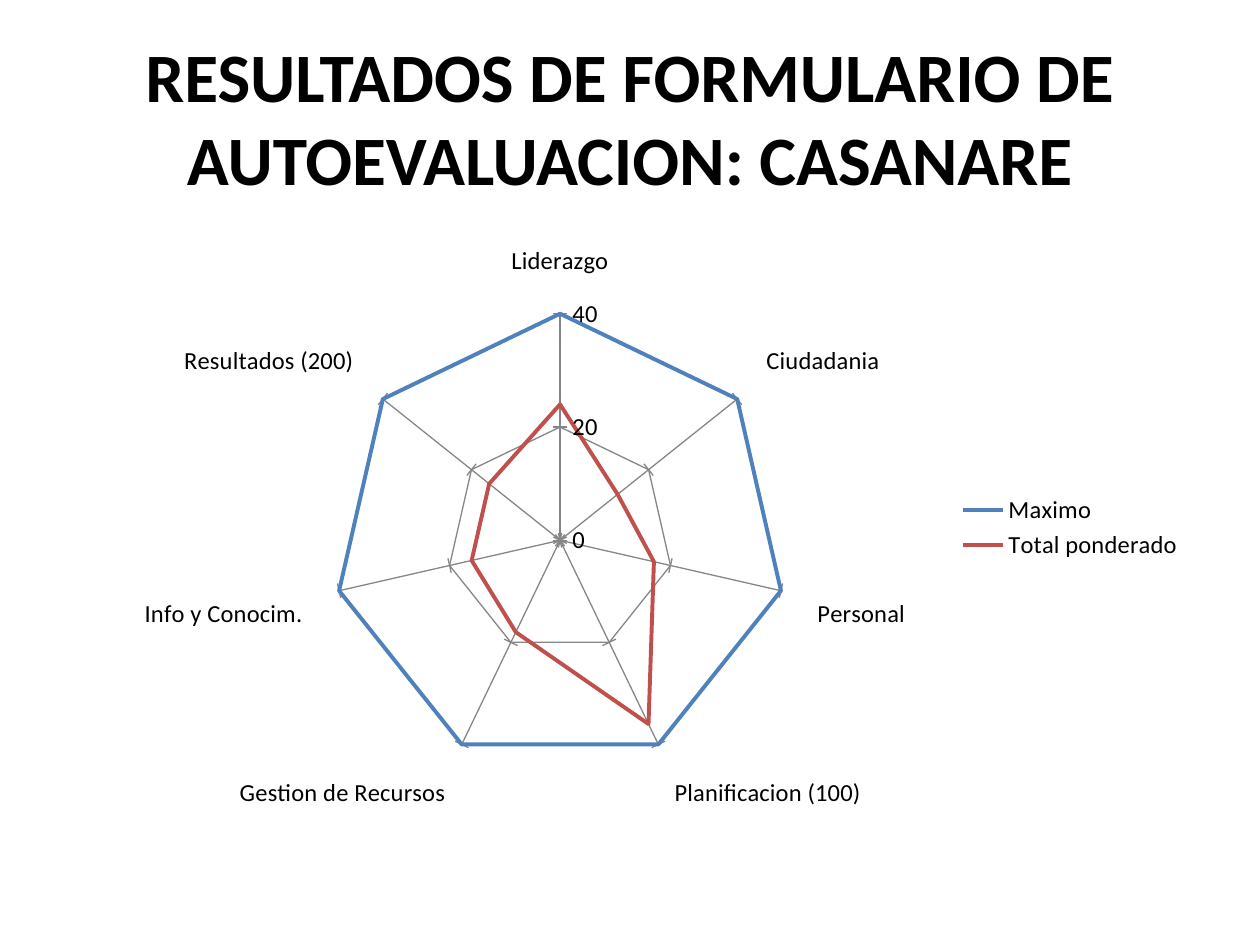
from pptx import Presentation
from pptx.chart.data import CategoryChartData
from pptx.dml.color import RGBColor
from pptx.enum.chart import XL_CHART_TYPE as ChartType, XL_LEGEND_POSITION as LegendPosition, XL_TICK_MARK as TickMark
from pptx.enum.text import MSO_ANCHOR as Anchor, MSO_AUTO_SIZE as AutoSize, PP_ALIGN as Align
from pptx.util import Inches, Pt

BLACK = RGBColor(0x00, 0x00, 0x00)
GRAY = RGBColor(0x86, 0x86, 0x86)
BLUE = RGBColor(0x4F, 0x81, 0xBD)
RED = RGBColor(0xC0, 0x50, 0x4D)
FONT = "Calibri"

CRITERIA = ["Liderazgo", "Ciudadania", "Personal", "Planificacion (100)",
            "Gestion de Recursos", "Info y Conocim.", "Resultados (200)"]
SCORES = [
    ("Maximo", [40] * len(CRITERIA), BLUE),
    ("Total ponderado", [24, 13, 17, 36, 18, 16, 16], RED),
]


def format_font(font, size, bold=False, color=BLACK):
    """Apply the slide typeface to a font."""
    font.name = FONT
    font.size = Pt(size)
    font.bold = bold
    font.color.rgb = color


def write_text(frame, text, size, bold=False, color=BLACK, align=Align.CENTER):
    """Fill a text frame with one formatted paragraph."""
    frame.word_wrap = True
    frame.auto_size = AutoSize.NONE
    frame.vertical_anchor = Anchor.MIDDLE
    paragraph = frame.paragraphs[0]
    paragraph.alignment = align
    run = paragraph.add_run()
    run.text = text
    format_font(run.font, size, bold, color)


def place_title(slide, left, top, width, height):
    """Place the slide heading in the given box."""
    heading = slide.shapes.title
    heading.left, heading.top = left, top
    heading.width, heading.height = width, height
    write_text(heading.text_frame,
               "RESULTADOS DE FORMULARIO DE AUTOEVALUACION: CASANARE",
               size=39.6, bold=True)


def place_radar(slide, left, top, width, height):
    """Draw the scores by criterion as a radar in the given box."""
    scores = CategoryChartData(number_format="General")
    scores.categories = CRITERIA
    for name, values, _ in SCORES:
        scores.add_series(name, values)
    radar = slide.shapes.add_chart(ChartType.RADAR, left, top, width, height, scores).chart
    radar.has_title = False
    format_font(radar.font, 14)

    radar.has_legend = True
    radar.legend.position = LegendPosition.RIGHT
    radar.legend.include_in_layout = False

    plot = radar.plots[0]
    plot.vary_by_categories = False
    for series, (_, _, color) in zip(plot.series, SCORES):
        series.smooth = False
        series.format.line.color.rgb = color
        series.format.line.width = Pt(2.25)

    scale = radar.value_axis
    scale.minimum_scale, scale.maximum_scale, scale.major_unit = 0, 40, 20
    scale.major_tick_mark = TickMark.CROSS
    radar.category_axis.major_tick_mark = TickMark.OUTSIDE
    for axis in (radar.category_axis, scale):
        axis.minor_tick_mark = TickMark.NONE
        axis.has_major_gridlines = True
        for line in (axis.format.line, axis.major_gridlines.format.line):
            line.color.rgb = GRAY
            line.width = Pt(0.75)


def main():
    """Build the self-assessment results slide."""
    deck = Presentation()
    deck.slide_width, deck.slide_height = Inches(10), Inches(7.5)
    slide = deck.slides.add_slide(deck.slide_layouts[5])
    place_title(slide, Inches(0.5), Inches(0.3), Inches(9), Inches(1.25))
    place_radar(slide, Inches(0.75), Inches(1.86), Inches(8.74), Inches(4.65))
    deck.save("out.pptx")


if __name__ == "__main__":
    main()
